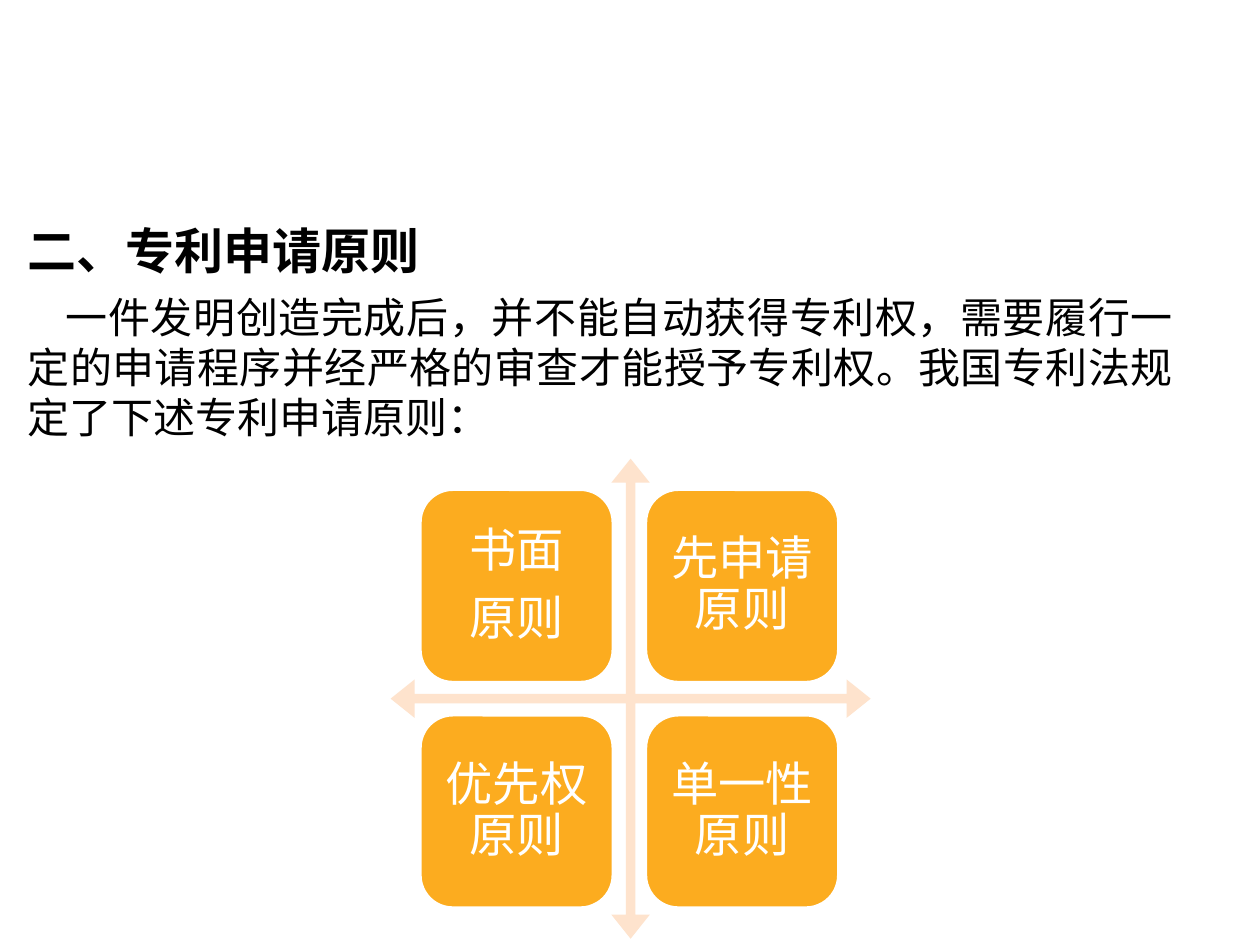
"""Build a slide on the principles of patent application."""
import pptx
import pptx.dml.color
import pptx.enum.shapes
import pptx.enum.text
import pptx.oxml
import pptx.oxml.ns
import pptx.util

Inches = pptx.util.Inches
Pt = pptx.util.Pt
SHAPE = pptx.enum.shapes.MSO_SHAPE
ALIGN = pptx.enum.text.PP_ALIGN
ANCHOR = pptx.enum.text.MSO_ANCHOR

HEADING = "二、专利申请原则"
INTRODUCTION = (
    "一件发明创造完成后，并不能自动获得专利权，需要履行一定的申请程序并经严格的审查才能授予专利权。"
    "我国专利法规定了下述专利申请原则："
)
PRINCIPLES = [["书面", "原则"], ["先申请原则"], ["优先权原则"], ["单一性原则"]]
ARROW = (3.1, 3.64, 3.81)
ARROW_ADJUSTMENTS = (0.02, 0.04, 0.05)
TILE_LEFT, TILE_TOP, TILE_SIZE, TILE_STEP = 3.34, 3.89, 1.52, 1.79


def colour(value):
    return pptx.dml.color.RGBColor.from_string(value)


def write(box, lines, *, size, fill="000000", bold=False, align=ALIGN.JUSTIFY,
          anchor=ANCHOR.TOP, spacing=1.0, after=0, indent=0, inset=(0.1, 0.05)):
    frame = box.text_frame
    frame.word_wrap = True
    frame.auto_size = pptx.enum.text.MSO_AUTO_SIZE.NONE
    frame.vertical_anchor = anchor
    frame.margin_left = frame.margin_right = Inches(inset[0])
    frame.margin_top = frame.margin_bottom = Inches(inset[1])
    frame.text = "\n".join(lines)
    for para in frame.paragraphs:
        properties = para._p.get_or_add_pPr()
        properties.set("marL", "0")
        properties.set("indent", str(Inches(indent)))
        properties.append(pptx.oxml.parse_xml(
            f"<a:buNone {pptx.oxml.ns.nsdecls('a')}/>"))
        para.alignment = align
        para.line_spacing = spacing
        para.space_before = Pt(0)
        para.space_after = Pt(after)
        for span in para.runs:
            span.font.name = "Arial"
            span.font.size = Pt(size)
            span.font.bold = bold
            span.font.color.rgb = colour(fill)


def place(box, left, top, width, height):
    box.left, box.top = Inches(left), Inches(top)
    box.width, box.height = Inches(width), Inches(height)


def add_block(page, kind, left, top, size, fill):
    block = page.shapes.add_shape(
        kind, Inches(left), Inches(top), Inches(size), Inches(size))
    block.shadow.inherit = False
    block.fill.solid()
    block.fill.fore_color.rgb = colour(fill)
    block.line.fill.background()
    return block


def main():
    deck = pptx.Presentation()
    deck.slide_width, deck.slide_height = Inches(10), Inches(7.5)
    page = deck.slides.add_slide(deck.slide_layouts[1])

    title, body = page.placeholders
    place(title, 0.12, 1.7, 9.29, 0.56)
    write(title, [HEADING], size=28, bold=True)
    place(body, 0.12, 2.26, 9.29, 1.22)
    write(body, [INTRODUCTION], size=24, indent=0.3)

    arrow = add_block(page, SHAPE.QUAD_ARROW, *ARROW, "FEE3CD")
    for index, value in enumerate(ARROW_ADJUSTMENTS):
        arrow.adjustments[index] = value

    for index, lines in enumerate(PRINCIPLES):
        row, column = divmod(index, 2)
        tile = add_block(page, SHAPE.ROUNDED_RECTANGLE, TILE_LEFT + column * TILE_STEP,
                         TILE_TOP + row * TILE_STEP, TILE_SIZE, "FCAC1F")
        tile.line.color.rgb = colour("FFFFFF")
        tile.line.width = Pt(1)
        write(tile, lines, size=27, fill="FFFFFF", align=ALIGN.CENTER,
              anchor=ANCHOR.MIDDLE, spacing=0.9, after=9.45, inset=(0.11, 0.11))

    deck.save("out.pptx")


if __name__ == "__main__":
    main()
